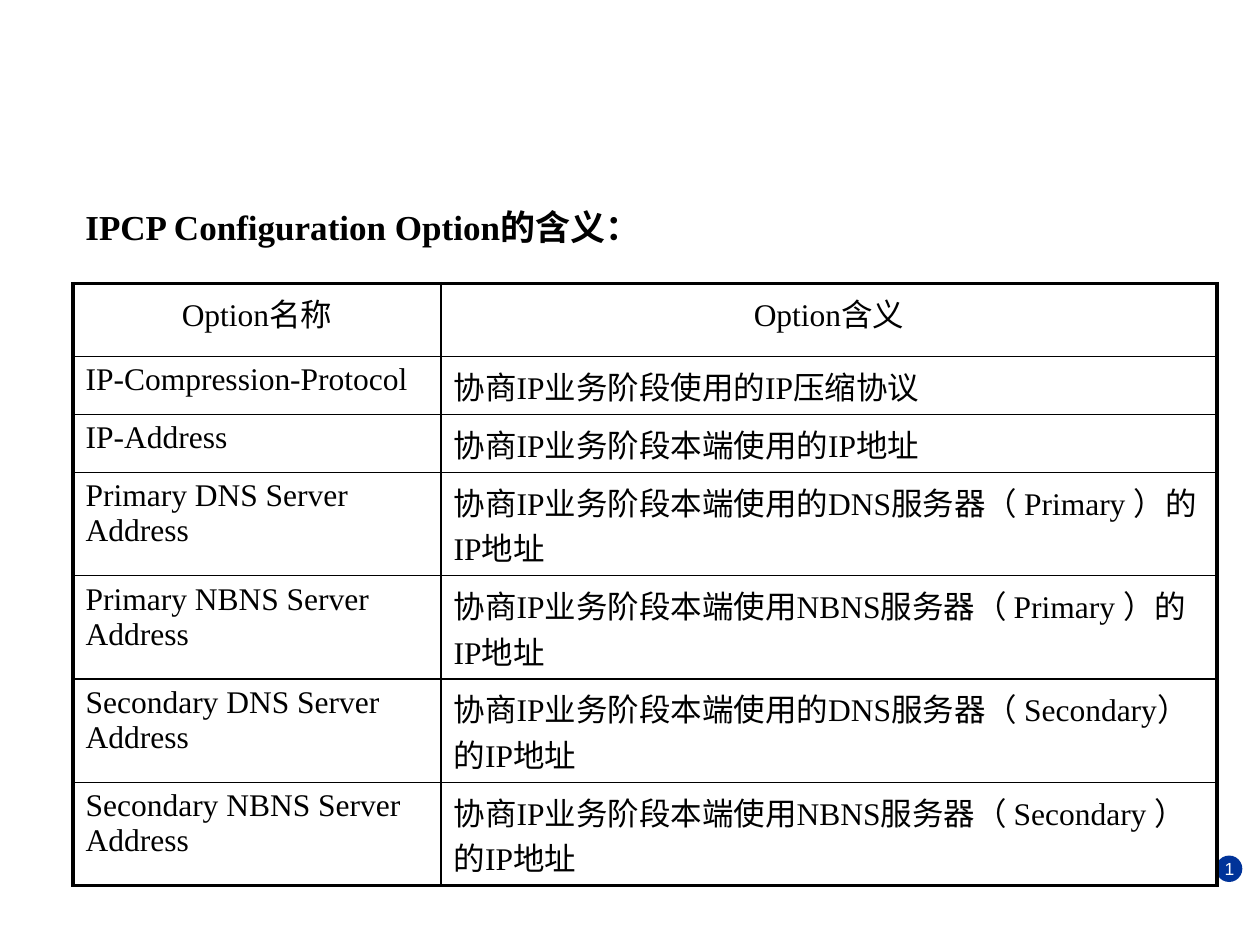
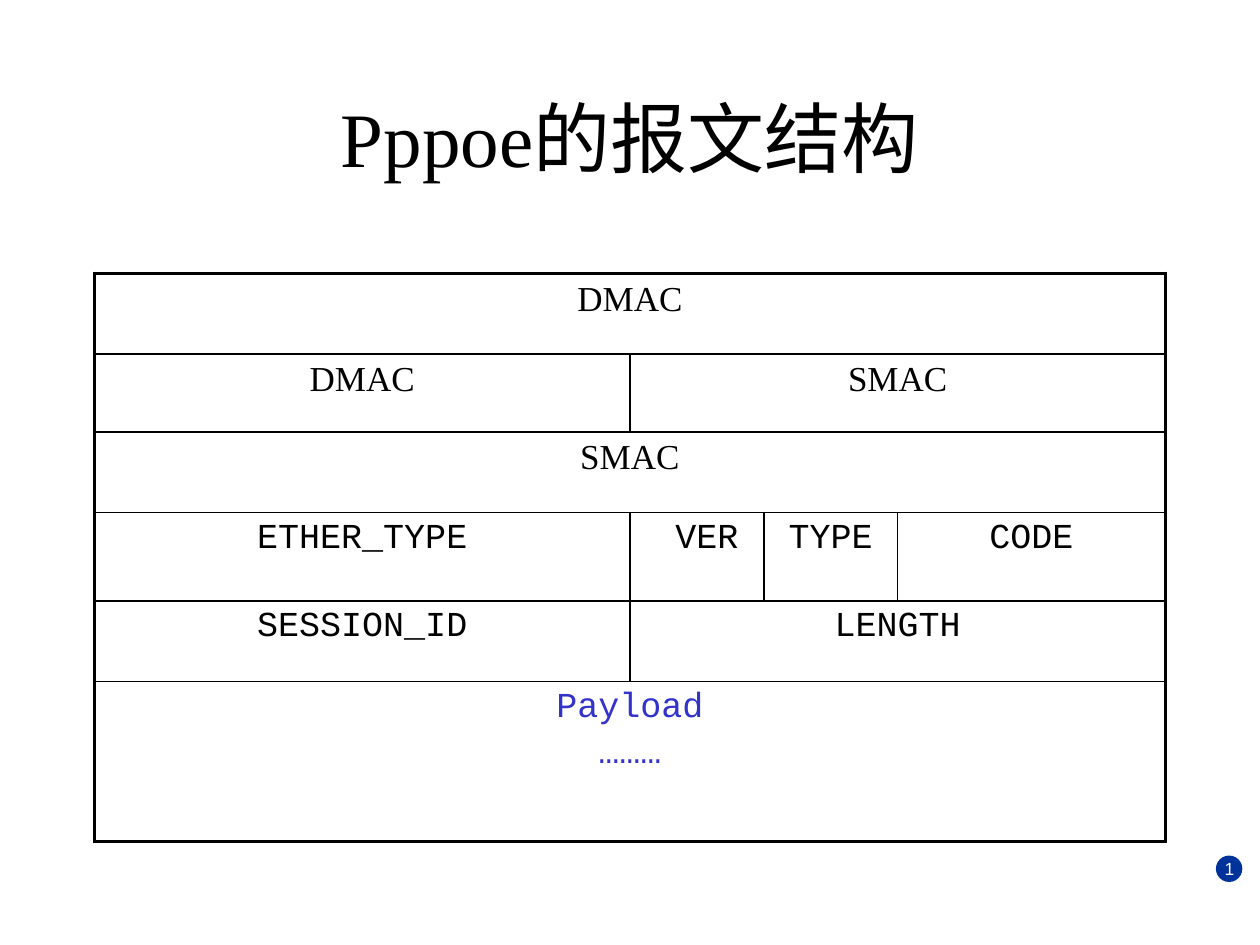
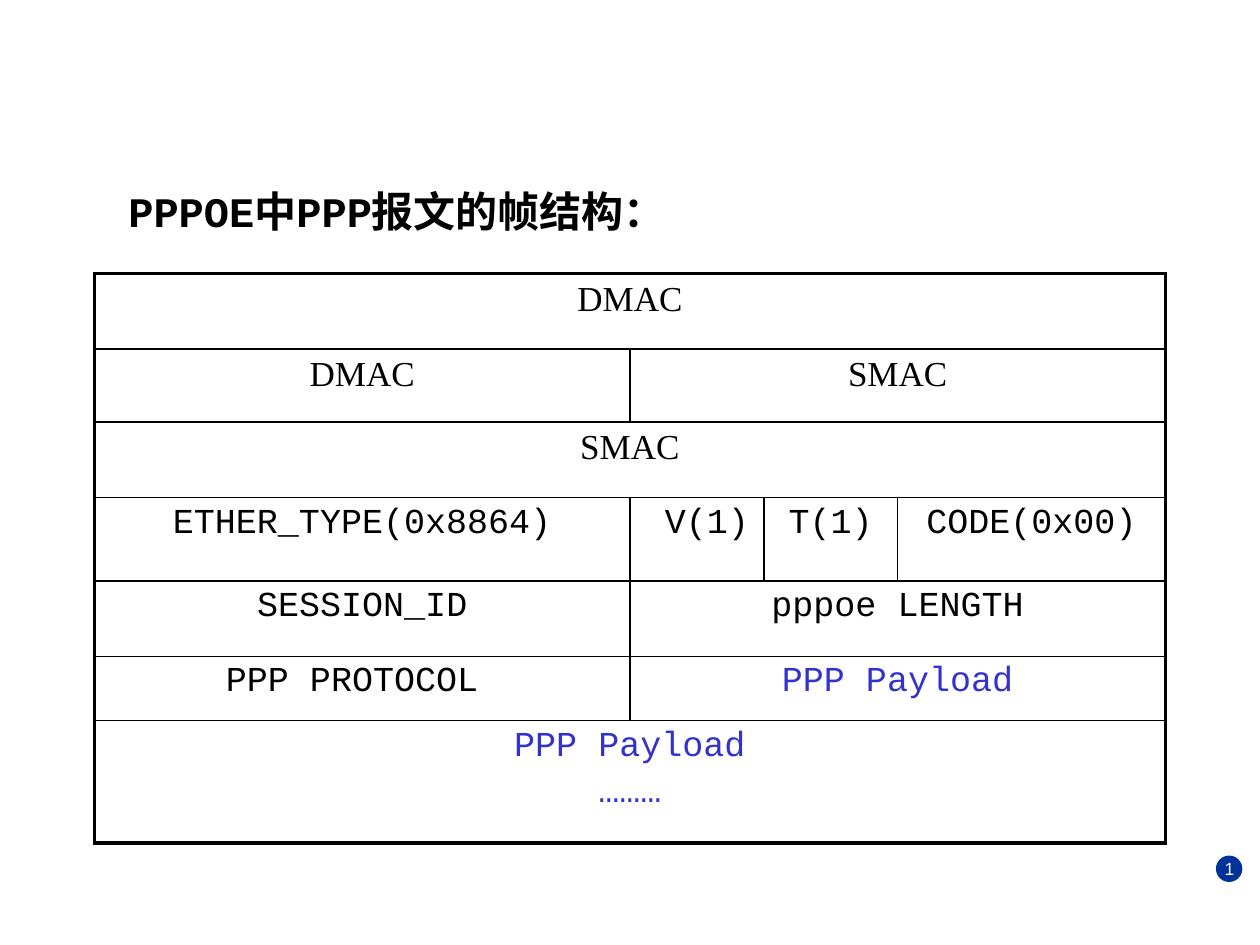
import dataclasses
import lxml.etree
import pptx
import pptx.dml.color
import pptx.enum.shapes
import pptx.enum.text
import pptx.oxml.ns
import pptx.util

WIDE, HIGH = 10, 7.5
BLACK, WHITE, NAVY, BLUE = "000000", "FFFFFF", "003399", "3333CC"
SERIF, MONO, SANS = "Times New Roman", "Courier New", "Arial"
THICK, THIN = 2.25, 1
INSET = 0.1
LEFT = pptx.enum.text.PP_ALIGN.LEFT
MID = pptx.enum.text.PP_ALIGN.CENTER
FRAME = (0.75, 2.17, 8.5)
SHARES = (4, 1, 1, 2)


@dataclasses.dataclass
class Cell:
    text: str
    span: int = 1
    font: str = SERIF
    size: int = 20
    color: str = BLACK
    align: object = MID
    shift: float = 0


def rgb(code):
    return pptx.dml.color.RGBColor.from_string(code)


def inch(*sizes):
    return [pptx.util.Inches(size) for size in sizes]


def style(para, font, size, color, align=LEFT, bold=False):
    para.alignment = align
    para.font.name = font
    para.font.size = pptx.util.Pt(size)
    para.font.bold = bold
    para.font.color.rgb = rgb(color)


def write(slide, box, runs, font, size, color=BLACK, wrap=True, pad=INSET, **look):
    """Add one line of text; runs are (text, font) pairs or plain text."""
    frame = slide.shapes.add_textbox(*inch(*box)).text_frame
    frame.word_wrap = wrap
    frame.margin_left = frame.margin_right = pptx.util.Inches(pad)
    para = frame.paragraphs[0]
    if isinstance(runs, str):
        para.text = runs
    else:
        for text, face in runs:
            run = para.add_run()
            run.text = text
            run.font.name = face
    style(para, font, size, color, **look)


def badge(slide):
    """Round page mark at the lower right."""
    dot = slide.shapes.add_shape(
        pptx.enum.shapes.MSO_SHAPE.OVAL, *inch(9.65, 6.79, 0.21, 0.21))
    dot.shadow.inherit = False
    dot.fill.solid()
    dot.fill.fore_color.rgb = rgb(NAVY)
    dot.line.fill.background()
    write(slide, (9.64, 6.76, 0.25, 0.26), "1", SANS, 10, WHITE, wrap=False, pad=0.08)


def edge(cell, side, width):
    props = cell._tc.get_or_add_tcPr()
    line = lxml.etree.SubElement(
        props, pptx.oxml.ns.qn("a:ln" + side), w=str(pptx.util.Pt(width)))
    fill = lxml.etree.SubElement(line, pptx.oxml.ns.qn("a:solidFill"))
    lxml.etree.SubElement(fill, pptx.oxml.ns.qn("a:srgbClr"), val=BLACK)


def fill_cell(cell, item):
    cell.margin_left, cell.margin_right = inch(INSET + item.shift, INSET - item.shift)
    cell.text = item.text
    for index, para in enumerate(cell.text_frame.paragraphs):
        if index:
            para.space_before = pptx.util.Pt(item.size * 0.2)
        style(para, item.font, item.size, item.color, item.align)


def grid(slide, frame, shares, rows):
    """Draw a table with a thick frame; rows are (height, cells) pairs."""
    left, top, width = frame
    high = sum(height for height, _ in rows)
    table = slide.shapes.add_table(
        len(rows), len(shares), *inch(left, top, width, high)).table
    table.first_row = table.horz_banding = False
    for col, share in zip(table.columns, shares):
        col.width = pptx.util.Inches(width * share / sum(shares))
    for y, (height, items) in enumerate(rows):
        table.rows[y].height = pptx.util.Inches(height)
        x = 0
        for item in items:
            last = x + item.span - 1
            outer = {"L": x == 0, "R": last == len(shares) - 1,
                     "T": y == 0, "B": y == len(rows) - 1}
            if item.span > 1:
                table.cell(y, x).merge(table.cell(y, last))
            for spot in range(x, last + 1):
                cell = table.cell(y, spot)
                for side, rim in outer.items():
                    edge(cell, side, THICK if rim else THIN)
                cell.fill.background()
            fill_cell(table.cell(y, x), item)
            x = last + 1


def code(text, span=1, **look):
    return Cell(text, span, MONO, **look)


def packet(slide, heights, fields):
    """Draw a frame layout that opens with the two MAC addresses."""
    macs = [[Cell("DMAC", 4)], [Cell("DMAC"), Cell("SMAC", 3)], [Cell("SMAC", 4)]]
    grid(slide, FRAME, SHARES, list(zip(heights, macs + fields)))


def options(slide):
    write(slide, (0.58, 1.58, 9, 4.5),
          [("IPCP Configuration Option的", SERIF), ("含义：", MONO)],
          SERIF, 20, bold=True)
    pairs = [
        ("IP-Compression-Protocol", "协商IP业务阶段使用的IP压缩协议"),
        ("IP-Address", "协商IP业务阶段本端使用的IP地址"),
        ("Primary DNS Server Address",
         "协商IP业务阶段本端使用的DNS服务器（ Primary ）的IP地址"),
        ("Primary NBNS Server Address",
         "协商IP业务阶段本端使用NBNS服务器（ Primary ）的IP地址"),
        ("Secondary DNS Server Address",
         "协商IP业务阶段本端使用的DNS服务器（ Secondary）的IP地址"),
        ("Secondary NBNS Server Address",
         "协商IP业务阶段本端使用NBNS服务器（ Secondary ）的IP地址"),
    ]
    heights = [0.46] * 2 + [0.82] * 4
    rows = [(0.58, [Cell("Option名称", size=18), Cell("Option含义", size=18)])]
    for height, pair in zip(heights, pairs):
        rows.append((height, [Cell(text, size=18, align=LEFT) for text in pair]))
    grid(slide, (0.58, 2.25, 9.08), (2.92, 6.16), rows)


def pppoe(slide):
    write(slide, (0.75, 0.67, 8.5, 1.25), "Pppoe的报文结构", SERIF, 44, align=MID)
    packet(slide, (0.64, 0.62, 0.64, 0.7, 0.64, 1.27), [
        [code("ETHER_TYPE"), code("VER", shift=0.08), code("TYPE"), code("CODE")],
        [code("SESSION_ID"), code("LENGTH", 3)],
        [code("Payload\n………", 4, color=BLUE)],
    ])


def ppp(slide):
    packet(slide, (0.6, 0.58, 0.6, 0.66, 0.6, 0.51, 0.97), [
        [code("ETHER_TYPE(0x8864)"), code("V(1)", shift=0.08),
         code("T(1)"), code("CODE(0x00)")],
        [code("SESSION_ID"), code("pppoe LENGTH", 3)],
        [code("PPP PROTOCOL", shift=-0.08), code("PPP Payload", 3, color=BLUE)],
        [code("PPP Payload\n………", 4, color=BLUE)],
    ])
    write(slide, (0.92, 1.42, 8.25, 0.5), "PPPOE中PPP报文的帧结构：",
          MONO, 24, bold=True)


def main():
    deck = pptx.Presentation()
    deck.slide_width, deck.slide_height = inch(WIDE, HIGH)
    for draw in (options, pppoe, ppp):
        slide = deck.slides.add_slide(deck.slide_layouts[6])
        badge(slide)
        draw(slide)
    deck.save("out.pptx")


if __name__ == "__main__":
    main()
